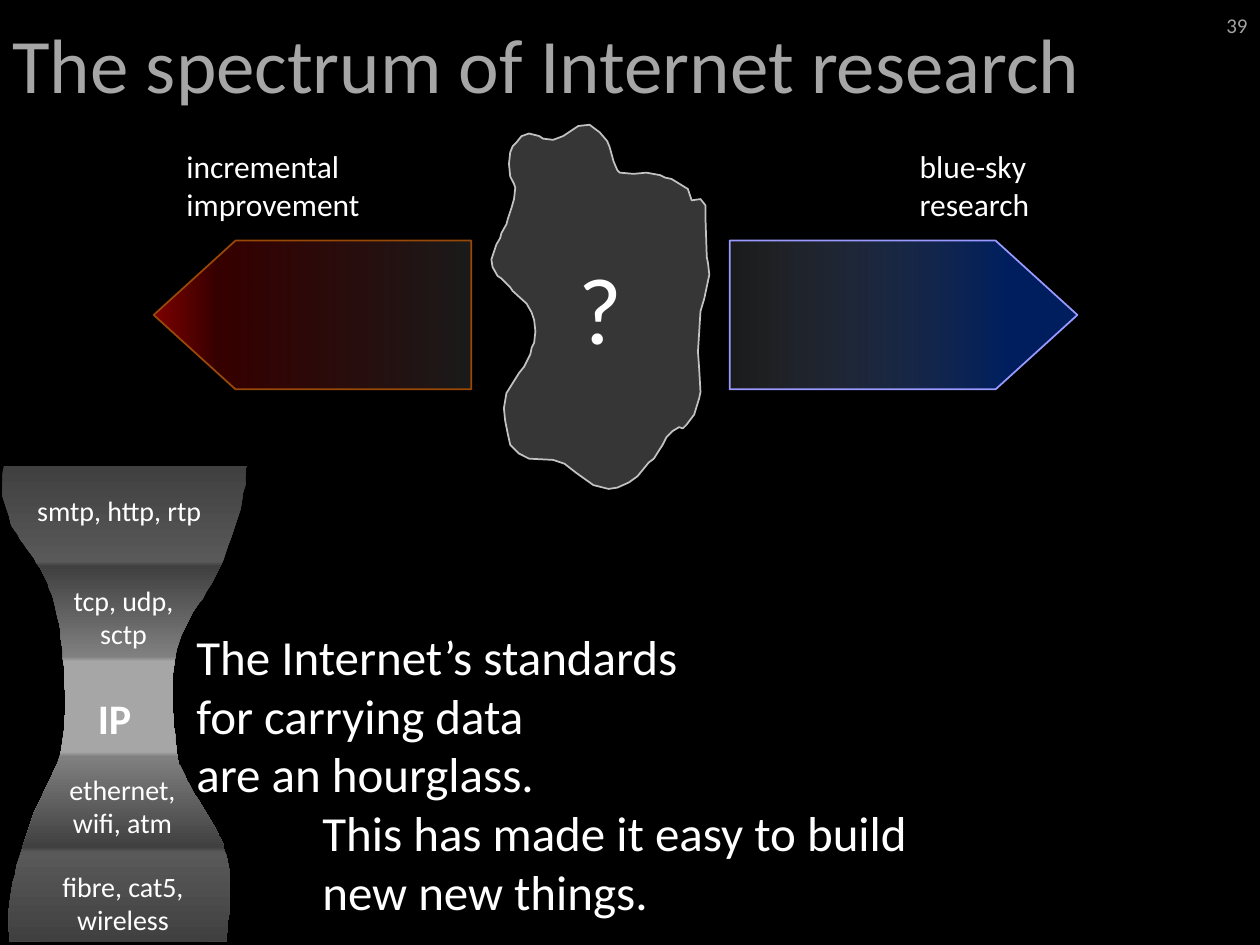
from dataclasses import dataclass

from lxml import etree
from pptx import Presentation
from pptx.dml.color import RGBColor
from pptx.enum import shapes, text
from pptx.oxml.ns import qn
from pptx.util import Cm, Pt


@dataclass(frozen=True)
class Theme:
    font: str = "Calibri"
    background: str = "000000"
    white: str = "FFFFFF"
    title: str = "A6A6A6"
    number: str = "A2A2A2"
    middle: str = "363636"
    middle_line: str = "C2C2C2"
    grey: str = "595959"
    dark: str = "404040"
    mid: str = "808080"
    red: str = "C00000"
    red_line: str = "984807"
    blue: str = "002060"
    blue_line: str = "9999FF"
    title_size: int = 44
    mark_size: int = 54
    body_size: int = 28
    ip_size: int = 24
    label_size: int = 18
    layer_size: int = 16
    number_size: int = 12


theme = Theme()
rgb = RGBColor.from_string
align, anchors = text.PP_ALIGN, text.MSO_ANCHOR


def write(sp, words, size, color=theme.white, bold=None, al=align.LEFT, anchor=anchors.TOP, grow=False):
    """Fill a shape with text, one paragraph a line, and return its text frame."""
    tf = sp.text_frame
    tf.word_wrap = True
    tf.vertical_anchor = anchor
    if grow:
        tf.auto_size = text.MSO_AUTO_SIZE.SHAPE_TO_FIT_TEXT
    tf.text = words
    for p in tf.paragraphs:
        p.alignment = al
        font = p.runs[0].font
        font.size, font.bold = Pt(size), bold
        font.color.rgb = rgb(color)
        font.name = theme.font
    return tf


def fill_gradient(sp, stops, angle):
    """Fill with (position %, colour, opacity %) stops; angle is clockwise degrees."""
    sp.fill.gradient()
    grad = sp._element.spPr.find(qn("a:gradFill"))
    grad.set("rotWithShape", "1")
    grad.find(qn("a:lin")).set("ang", str(angle * 60000))
    gs_list = grad.find(qn("a:gsLst"))
    for old in list(gs_list):
        gs_list.remove(old)
    for position, color, opacity in stops:
        gs = etree.SubElement(gs_list, qn("a:gs"), pos=str(position * 1000))
        clr = etree.SubElement(gs, qn("a:srgbClr"), val=color)
        if opacity < 100:
            etree.SubElement(clr, qn("a:alpha"), val=str(opacity * 1000))


prs = Presentation()
prs.slide_width, prs.slide_height = Cm(25.4), Cm(19.05)
s = prs.slides.add_slide(prs.slide_layouts[6])
s.background.fill.solid()
s.background.fill.fore_color.rgb = rgb(theme.background)

# Title and slide number
write(s.shapes.add_textbox(Cm(0), Cm(0), Cm(25.4), Cm(2.51)), "The spectrum of Internet research",
      theme.title_size, theme.title, anchor=anchors.MIDDLE)
write(s.shapes.add_textbox(Cm(23.29), Cm(0), Cm(2.11), Cm(1.02)), "39",
      theme.number_size, theme.number, al=align.RIGHT, anchor=anchors.MIDDLE)

# Two arrows pointing to the ends of the spectrum, each with its label
ends = [
    (3.1, 6.4, True, [(0, theme.grey, 30), (80, theme.red, 28), (100, theme.red, 66)],
     theme.red_line, 3.51, "incremental\nimprovement"),
    (14.71, 7.01, False, [(0, theme.grey, 30), (80, theme.blue, 100), (100, theme.blue, 100)],
     theme.blue_line, 18.29, "blue-sky\nresearch"),
]
for left, width, flipped, stops, line, label_left, label in ends:
    arrow = s.shapes.add_shape(shapes.MSO_SHAPE.RIGHT_ARROW, Cm(left), Cm(4.85), Cm(width), Cm(3))
    arrow.adjustments[0], arrow.adjustments[1] = 1, 0.55
    arrow.shadow.inherit = False
    fill_gradient(arrow, stops, 0)
    arrow.line.color.rgb = rgb(line)
    arrow.line.width = Pt(1)
    if flipped:
        arrow._element.spPr.find(qn("a:xfrm")).set("flipH", "1")
    write(s.shapes.add_textbox(Cm(label_left), Cm(2.84), Cm(5), Cm(1.8)), label,
          theme.label_size, grow=True)

# Outlines are given on a grid of 100 units to 2.54 cm
unit = Cm(2.54) / 100

# Unknown middle ground
middle_points = [
    (546, 150), (533, 142), (528, 141), (524, 139), (513, 137), (503, 138), (492, 137), (490, 135),
    (487, 128), (484, 117), (482, 112), (476, 105), (472, 102), (468, 99), (459, 100), (453, 104),
    (447, 108), (439, 111), (431, 110), (428, 108), (420, 106), (414, 108), (410, 113), (407, 116),
    (405, 121), (404, 130), (405, 140), (408, 146), (409, 149), (408, 158), (406, 165), (403, 174),
    (402, 178), (398, 185), (397, 189), (394, 194), (390, 206), (391, 212), (395, 219), (398, 221),
    (405, 228), (407, 231), (418, 241), (422, 248), (424, 254), (425, 263), (424, 272), (422, 276),
    (421, 281), (416, 291), (412, 296), (402, 312), (400, 324), (401, 334), (403, 344), (405, 353),
    (412, 360), (420, 364), (439, 365), (448, 368), (457, 375), (471, 385), (483, 388), (490, 387),
    (499, 383), (506, 378), (515, 367), (519, 364), (524, 356), (526, 353), (529, 347), (534, 342),
    (539, 339), (542, 340), (545, 337), (551, 329), (555, 316), (556, 311), (555, 293), (554, 279),
    (556, 247), (559, 237), (563, 218), (562, 209), (561, 204), (560, 174), (560, 163), (556, 158),
    (549, 159),
]
builder = s.shapes.build_freeform(*middle_points[0], scale=unit)
builder.add_line_segments(middle_points[1:])
middle = builder.convert_to_shape()
middle.shadow.inherit = False
middle.fill.solid()
middle.fill.fore_color.rgb = rgb(theme.middle)
middle.line.color.rgb = rgb(theme.middle_line)
middle.line.width = Pt(1)
write(middle, "?", theme.mark_size, al=align.CENTER, anchor=anchors.MIDDLE)

# Hourglass: each entry is a Bézier piece (two control points, then the end)
hourglass_start = (3, 370)
hourglass_curves = [
    ((0, 393), (3, 398), (8, 413)), ((13, 428), (29, 442), (36, 459)),
    ((43, 475), (47, 488), (49, 511)), ((51, 533), (54, 567), (49, 593)),
    ((44, 618), (27, 637), (21, 663)), ((14, 689), (3, 711), (8, 747)),
    ((45, 748), (131, 749), (180, 747)), ((181, 725), (185, 701), (180, 680)),
    ((175, 659), (157, 637), (150, 622)), ((143, 607), (142, 610), (140, 593)),
    ((138, 575), (134, 541), (140, 516)), ((146, 492), (167, 469), (177, 445)),
    ((186, 421), (194, 401), (196, 370)),
]
steps = 12
outline = [hourglass_start]
for c1, c2, end in hourglass_curves:
    start = outline[-1]
    for t in (i / steps for i in range(1, steps + 1)):
        outline.append(tuple(
            (1 - t) ** 3 * a + 3 * (1 - t) ** 2 * t * b + 3 * (1 - t) * t ** 2 * c + t ** 3 * d
            for a, b, c, d in zip(start, c1, c2, end)))

group = s.shapes.add_group_shape()
builder = group.shapes.build_freeform(*hourglass_start, scale=unit)
builder.add_line_segments(outline[1:])
hourglass = builder.convert_to_shape()
hourglass.shadow.inherit = False
hourglass.line.fill.background()
bands = [(0, theme.dark), (20, theme.grey), (21, theme.dark), (40, theme.mid), (41, theme.title),
         (60, theme.title), (61, theme.mid), (80, theme.dark), (81, theme.grey), (100, theme.dark)]
fill_gradient(hourglass, [(position, color, 100) for position, color in bands], 90)

layers = [
    ("smtp, http, rtp", -0.3, 9.83, 5.41, 0.94),
    ("tcp, udp, sctp", 1.04, 11.63, 2.9, 1.63),
    ("IP", 0.86, 13.84, 2.9, 1.27),
    ("ethernet, wifi, atm", 1.02, 15.44, 2.9, 1.63),
    ("fibre, cat5, wireless", 0.84, 17.4, 3.28, 1.63),
]
for name, *box in layers:
    waist = name == "IP"
    tf = write(group.shapes.add_textbox(*map(Cm, box)), name,
               theme.ip_size if waist else theme.layer_size,
               bold=waist or None, al=align.CENTER, grow=True)
    if waist:
        effects = etree.Element(qn("a:effectLst"))
        shadow = etree.SubElement(effects, qn("a:outerShdw"), blurRad="38100", dist="38100", dir="2700000")
        etree.SubElement(shadow, qn("a:srgbClr"), val=theme.background)
        tf.paragraphs[0].runs[0]._r.rPr.find(qn("a:solidFill")).addnext(effects)

# Message, with its conclusion indented
message = ("The Internet’s standards\nfor carrying data\nare an hourglass.\n"
           "This has made it easy to build\nnew new things.")
tf = write(s.shapes.add_textbox(Cm(3.71), Cm(12.5), Cm(19.89), Cm(6.25)), message,
           theme.body_size, grow=True)
for p in tf.paragraphs[3:]:
    p._p.get_or_add_pPr().set("marL", str(Cm(2.54)))

prs.save("out.pptx")
